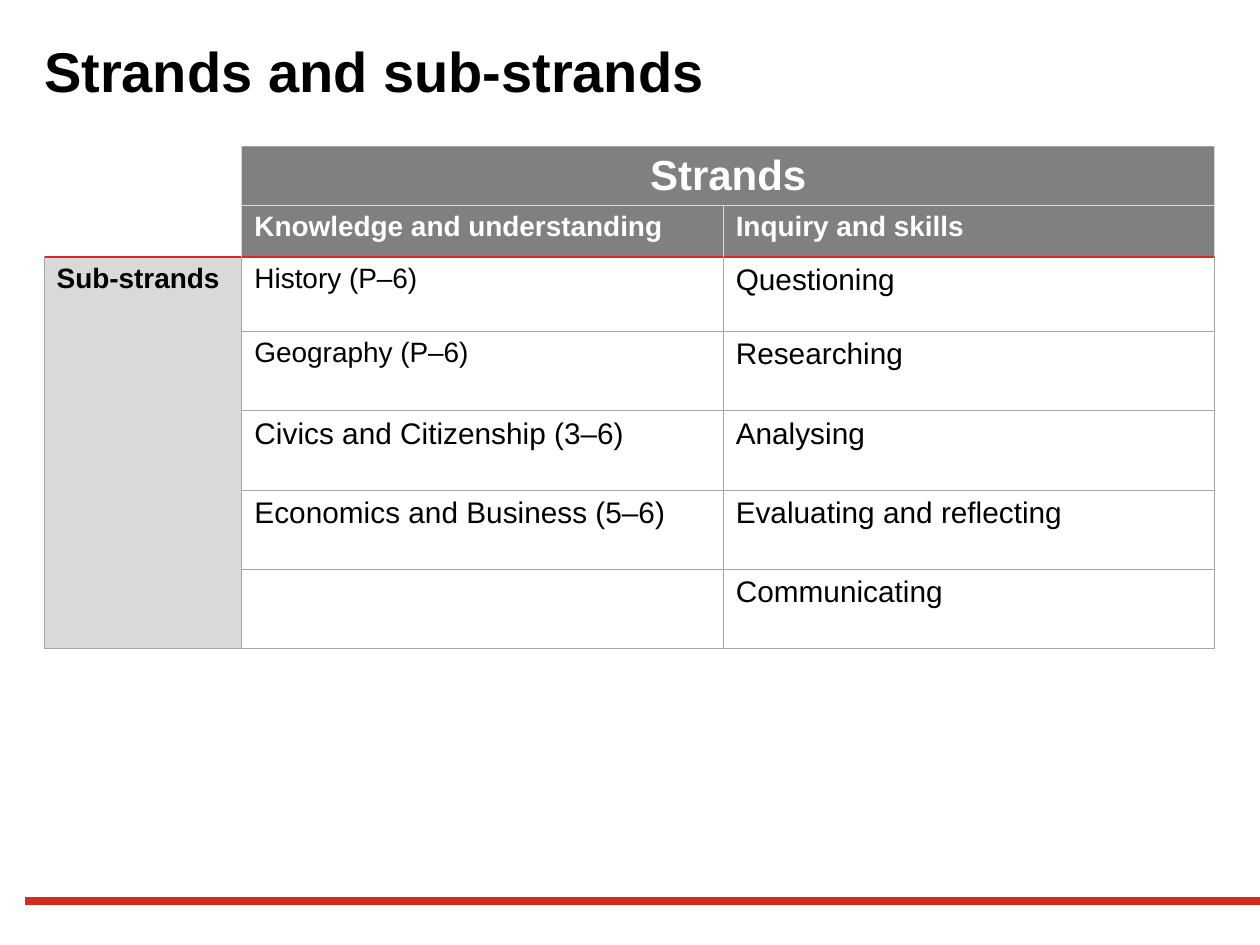
"""Build a slide with a table of curriculum strands and sub-strands."""
import pptx
import pptx.dml.color
import pptx.enum.shapes
import pptx.enum.text
import pptx.oxml
import pptx.oxml.ns
import pptx.util

Inches = pptx.util.Inches
COLORS = {"black": "000000", "white": "FFFFFF", "red": "D52B1E",
          "header": "808080", "light": "D9D9D9", "grid": "A6A6A6"}
ROWS = [
    ["", "Strands", ""],
    ["", "Knowledge and understanding", "Inquiry and skills"],
    ["Sub-strands", "History (P–6)", "Questioning"],
    ["", "Geography (P–6)", "Researching"],
    ["", "Civics and Citizenship (3–6)", "Analysing"],
    ["", "Economics and Business (5–6)", "Evaluating and reflecting"],
    ["", "", "Communicating"],
]
COLUMN_WIDTHS = [1.57, 3.82, 3.9]
ROW_HEIGHTS = [0.47, 0.41, 0.59] + [0.63] * 4
SMALL_BODY = ["Sub-strands", "History (P–6)", "Geography (P–6)"]


def style_text(paragraph, size, bold, color):
    for span in paragraph.runs:
        span.font.name = "Arial"
        span.font.size = pptx.util.Pt(size)
        span.font.bold = bold
        span.font.color.rgb = pptx.dml.color.RGBColor.from_string(COLORS[color])


def add_border(cell, side, color, width):
    line = pptx.oxml.parse_xml(
        f'<a:ln{side} {pptx.oxml.ns.nsdecls("a")} w="{pptx.util.Pt(width)}">'
        + (f'<a:solidFill><a:srgbClr val="{COLORS[color]}"/></a:solidFill>'
           if color else "<a:noFill/>") + f"</a:ln{side}>")
    cell._tc.get_or_add_tcPr().append(line)


deck = pptx.Presentation()
deck.slide_width, deck.slide_height = Inches(10), Inches(7.5)
page = deck.slides.add_slide(deck.slide_layouts[5])

footer_rule = page.shapes.add_connector(
    pptx.enum.shapes.MSO_CONNECTOR.STRAIGHT,
    Inches(0.2), Inches(7.15), Inches(10), Inches(7.15))
footer_rule.line.color.rgb = pptx.dml.color.RGBColor.from_string(COLORS["red"])
footer_rule.line.width = pptx.util.Pt(4.2)
footer_rule._element.spPr.append(
    pptx.oxml.parse_xml(f'<a:effectLst {pptx.oxml.ns.nsdecls("a")}/>'))

title = page.shapes.title
title.left, title.top = Inches(0.35), Inches(0.32)
title.width, title.height = Inches(9.29), Inches(0.48)
frame = title.text_frame
frame.text = "Strands and sub-strands"
frame.margin_left = frame.margin_right = frame.margin_top = frame.margin_bottom = 0
frame.vertical_anchor = pptx.enum.text.MSO_ANCHOR.MIDDLE
frame.auto_size = pptx.enum.text.MSO_AUTO_SIZE.NONE
frame.paragraphs[0].alignment = pptx.enum.text.PP_ALIGN.LEFT
style_text(frame.paragraphs[0], 32, True, "black")

table = page.shapes.add_table(
    len(ROWS), len(COLUMN_WIDTHS), Inches(0.35), Inches(1.16),
    Inches(sum(COLUMN_WIDTHS)), Inches(sum(ROW_HEIGHTS))).table
table.first_row = table.horz_banding = False
for column, width in zip(table.columns, COLUMN_WIDTHS):
    column.width = Inches(width)
for row, height in zip(table.rows, ROW_HEIGHTS):
    row.height = Inches(height)
table.cell(0, 1).merge(table.cell(0, 2))
table.cell(2, 0).merge(table.cell(6, 0))

for row_index, row in enumerate(ROWS):
    for column_index, text in enumerate(row):
        cell = table.cell(row_index, column_index)
        in_header = row_index < 2
        is_corner = in_header and column_index == 0
        side_line = ("light", 0.75) if in_header else ("grid", 0.5)
        top_line = {0: ("grid", 0.5), 1: ("light", 0.75), 2: ("red", 1.5)}.get(
            row_index, ("grid", 0.5))
        bottom_line = {0: ("light", 0.75), 1: ("red", 1.5)}.get(row_index, ("grid", 0.5))
        no_line = (None, 0.5)
        add_border(cell, "L", *(no_line if is_corner else side_line))
        add_border(cell, "R", *side_line)
        add_border(cell, "T", *(no_line if is_corner else top_line))
        add_border(cell, "B", *(no_line if is_corner and row_index == 0 else bottom_line))

        if is_corner or (column_index > 0 and not in_header):
            cell.fill.background()
        else:
            cell.fill.solid()
            cell.fill.fore_color.rgb = pptx.dml.color.RGBColor.from_string(
                COLORS["header" if in_header else "light"])

        cell.margin_bottom = Inches(0.03)
        if text:
            cell.text_frame.text = text
            size = 24 if row_index == 0 else 16 if in_header or text in SMALL_BODY else 17
            style_text(cell.text_frame.paragraphs[0], size,
                       in_header or column_index == 0,
                       "white" if in_header else "black")
table.cell(0, 1).text_frame.paragraphs[0].alignment = pptx.enum.text.PP_ALIGN.CENTER

deck.save("out.pptx")
